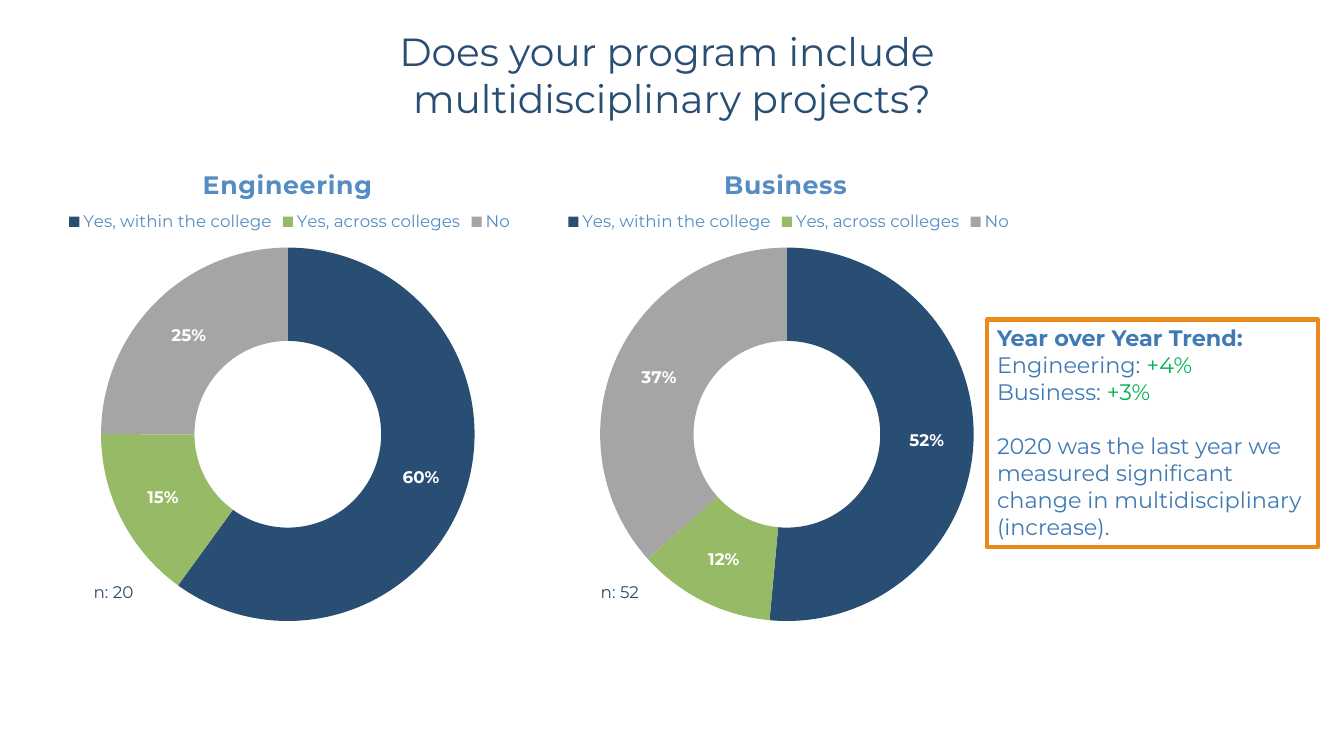
from dataclasses import dataclass

from lxml import etree
from pptx import Presentation
from pptx.chart.data import CategoryChartData
from pptx.dml.color import RGBColor as RGB
from pptx.enum.chart import XL_CHART_TYPE as ChartType, XL_LEGEND_POSITION as LegendPos
from pptx.enum.shapes import MSO_SHAPE as Shape
from pptx.enum.text import MSO_ANCHOR as Anchor, MSO_AUTO_SIZE as AutoSize, PP_ALIGN as Align
from pptx.oxml.ns import qn
from pptx.util import Inches, Pt


@dataclass(frozen=True)
class Theme:
    font: str = "Montserrat"
    navy: str = "294E73"
    green: str = "96BA65"
    gray: str = "A5A5A5"
    sky: str = "558CC3"
    blue: str = "407AB4"
    gain: str = "00B050"
    orange: str = "EB891C"
    white: str = "FFFFFF"
    heading: int = 28
    chart_title: int = 18
    callout: int = 16
    label: int = 12


theme = Theme()


def style(font, size, color, bold=False):
    font.name, font.size, font.bold = theme.font, Pt(size), bold
    font.color.rgb = RGB.from_string(color)


def place(chart, part, index, **shares):
    """Pin a chart part at shares (x, y, w, h) of the chart frame."""
    parent = chart.element.find(".//" + qn(part))
    for old in parent.findall(qn("c:layout")):
        parent.remove(old)
    layout = etree.Element(qn("c:layout"))
    manual = etree.SubElement(layout, qn("c:manualLayout"))
    if "w" in shares:
        etree.SubElement(manual, qn("c:layoutTarget")).set("val", "inner")
    for axis in "xy":
        etree.SubElement(manual, qn(f"c:{axis}Mode")).set("val", "edge")
    for key, share in shares.items():
        etree.SubElement(manual, qn(f"c:{key}")).set("val", str(share))
    parent.insert(index, layout)


prs = Presentation()
prs.slide_width, prs.slide_height = Inches(13.33), Inches(7.5)
slide = prs.slides.add_slide(prs.slide_layouts[5])

heading = slide.shapes.title
heading.left, heading.top = Inches(2.02), Inches(0.22)
heading.width, heading.height = Inches(9.29), Inches(1.04)
heading_text = heading.text_frame
heading_text.text = "Does your program include \nmultidisciplinary projects?"
heading_text.auto_size = AutoSize.NONE
heading_text.vertical_anchor = Anchor.TOP
for line in heading_text.paragraphs:
    line.alignment = Align.CENTER
    style(line.font, theme.heading, theme.navy)

answers = ["Yes, within the college", "Yes, across colleges", "No"]
answer_colors = [theme.navy, theme.green, theme.gray]
first_left, column_step = -0.85, 4.95

# program, answer shares, sample size, left of the sample note, left share of the title
programs = [
    ("Engineering", (60, 15, 25), 20, 0.83, 0.38),
    ("Business", (52, 12, 37), 52, 5.86, 0.41),
]
for column, (program, shares, sample, note_left, title_x) in enumerate(programs):
    data = CategoryChartData(number_format='0"%"')
    data.categories = answers
    data.add_series("Share of programs", shares)
    chart = slide.shapes.add_chart(
        ChartType.DOUGHNUT, Inches(first_left + column * column_step), Inches(1.37),
        Inches(7.41), Inches(4.94), data).chart
    style(chart.font, theme.label, theme.navy)

    chart.has_title = True
    chart.chart_title.text_frame.text = program
    title_font = chart.chart_title.text_frame.paragraphs[0].font
    style(title_font, theme.chart_title, theme.sky, bold=True)
    chart.element.find(".//" + qn("a:defRPr")).set("spc", "50")
    place(chart, "c:title", 1, x=title_x, y=0.05)

    chart.has_legend = True
    chart.legend.position = LegendPos.TOP
    chart.legend.include_in_layout = False
    style(chart.legend.font, theme.label, theme.sky)
    place(chart, "c:legend", 1, x=0.2, y=0.14)
    place(chart, "c:plotArea", 0, x=0.25, y=0.22, w=0.5, h=0.75)

    plot = chart.plots[0]
    plot.vary_by_categories = True
    for index, color in enumerate(answer_colors):
        fill = plot.series[0].points[index].format.fill
        fill.solid()
        fill.fore_color.rgb = RGB.from_string(color)
    plot.has_data_labels = True
    labels = plot.data_labels
    labels.show_value, labels.show_percentage = True, False
    labels.number_format, labels.number_format_is_linked = '0"%"', False
    style(labels.font, theme.label, theme.white, bold=True)

    note = slide.shapes.add_textbox(Inches(note_left), Inches(5.72), Inches(0.96), Inches(0.3))
    note.text_frame.word_wrap = True
    note.text_frame.text = f"n: {sample}"
    style(note.text_frame.paragraphs[0].font, theme.label, theme.navy)

trend = slide.shapes.add_shape(
    Shape.RECTANGLE, Inches(9.79), Inches(3.17), Inches(3.28), Inches(2.26))
trend.shadow.inherit = False
trend.fill.background()
trend.line.color.rgb = RGB.from_string(theme.orange)
trend.line.width = Pt(3)
trend_text = trend.text_frame
trend_text.word_wrap = True
trend_text.vertical_anchor = Anchor.TOP

trend_lines = [
    ("Year over Year Trend:", ""),
    ("Engineering: ", "+4%"),
    ("Business: ", "+3%"),
    ("2020 was the last year we measured significant change in "
     "multidisciplinary (increase).", ""),
]
for index, (words, change) in enumerate(trend_lines):
    line = trend_text.paragraphs[0] if index == 0 else trend_text.add_paragraph()
    line.alignment = Align.LEFT
    style(line.font, theme.callout, theme.blue, bold=index == 0)
    line.add_run().text = words
    if change:
        gain = line.add_run()
        gain.text = change
        gain.font.color.rgb = RGB.from_string(theme.gain)
line.space_before = Pt(19.5)

prs.save("out.pptx")
